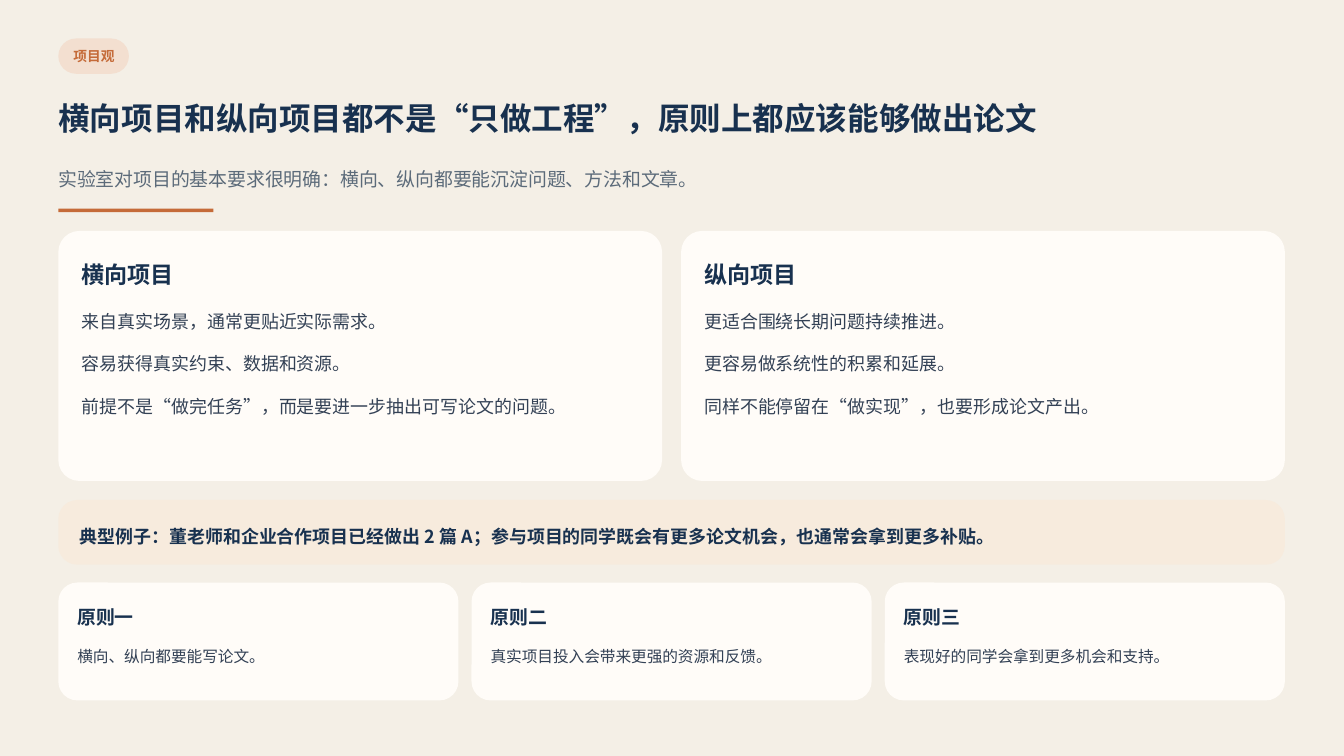
from lxml.etree import SubElement
from pptx import Presentation
from pptx.dml.color import RGBColor
from pptx.enum.shapes import MSO_SHAPE as Shape
from pptx.enum.text import MSO_ANCHOR as Anchor, PP_ALIGN as Align
from pptx.oxml.ns import qn
from pptx.util import Cm, Pt

TAG = "项目观"
TITLE = "横向项目和纵向项目都不是“只做工程”，原则上都应该能够做出论文"
SUBTITLE = "实验室对项目的基本要求很明确：横向、纵向都要能沉淀问题、方法和文章。"
PROJECTS = [
    ("横向项目", [
        "来自真实场景，通常更贴近实际需求。",
        "容易获得真实约束、数据和资源。",
        "前提不是“做完任务”，而是要进一步抽出可写论文的问题。",
    ]),
    ("纵向项目", [
        "更适合围绕长期问题持续推进。",
        "更容易做系统性的积累和延展。",
        "同样不能停留在“做实现”，也要形成论文产出。",
    ]),
]
EXAMPLE = "典型例子：董老师和企业合作项目已经做出 2 篇 A；参与项目的同学既会有更多论文机会，也通常会拿到更多补贴。"
PRINCIPLES = [
    ("原则一", "横向、纵向都要能写论文。"),
    ("原则二", "真实项目投入会带来更强的资源和反馈。"),
    ("原则三", "表现好的同学会拿到更多机会和支持。"),
]

FONT = "Noto Sans CJK SC"
PAPER = RGBColor(0xF4, 0xEF, 0xE6)
CARD = RGBColor(0xFF, 0xFC, 0xF8)
BAND = RGBColor(0xF7, 0xEB, 0xDD)
PEACH = RGBColor(0xF3, 0xDF, 0xD0)
ORANGE = RGBColor(0xC5, 0x6B, 0x39)
NAVY = RGBColor(0x18, 0x31, 0x4F)
SLATE = RGBColor(0x33, 0x41, 0x55)
GRAY = RGBColor(0x5C, 0x6B, 0x7A)

LEFT, WIDTH = 1.47, 30.91
PROJECT_TOP, PROJECT_HEIGHT, PROJECT_GAP, PROJECT_PAD = 5.82, 6.3, 0.48, 0.58
LINE_OFFSET, LINE_PITCH = 1.73, 1.07
BAND_TOP, BAND_HEIGHT, BAND_PAD = 12.6, 1.63, 0.53
PRINCIPLE_TOP, PRINCIPLE_HEIGHT, PRINCIPLE_GAP, PRINCIPLE_PAD = 14.68, 2.97, 0.33, 0.48


def write(shape, text, size, color, spacing, bold=False):
    """Fill a shape with one formatted paragraph without margins."""
    frame = shape.text_frame
    frame.word_wrap = True
    frame.vertical_anchor = Anchor.TOP
    frame.margin_left = frame.margin_top = frame.margin_right = frame.margin_bottom = 0
    paragraph = frame.paragraphs[0]
    paragraph.text = text
    paragraph.alignment = Align.LEFT
    paragraph.line_spacing = spacing
    paragraph.space_before = Pt(0)
    font = paragraph.font
    font.name, font.size, font.bold = FONT, Pt(size), bold
    font.color.rgb = color
    properties = paragraph._p.get_or_add_pPr().find(qn("a:defRPr"))
    SubElement(properties, qn("a:ea")).set("typeface", FONT)


def add_text(slide, left, top, width, height, *style):
    """Add a text box."""
    write(slide.shapes.add_textbox(Cm(left), Cm(top), Cm(width), Cm(height)), *style)


def add_panel(slide, left, top, width, height, color, radius=0):
    """Add a plain panel, rounded when a radius is given."""
    kind = Shape.ROUNDED_RECTANGLE if radius else Shape.RECTANGLE
    panel = slide.shapes.add_shape(kind, Cm(left), Cm(top), Cm(width), Cm(height))
    if radius:
        panel.adjustments[0] = radius / height
    panel.shadow.inherit = False
    panel.fill.solid()
    panel.fill.fore_color.rgb = color
    panel.line.fill.background()


def columns(count, gap):
    """Return the left edges and the width of equal columns."""
    width = (WIDTH - gap * (count - 1)) / count
    return [LEFT + index * (width + gap) for index in range(count)], width


def add_header(slide):
    """Add the tag, title, subtitle and accent rule."""
    add_panel(slide, LEFT, 0.97, 1.78, 0.89, PEACH, 0.445)
    add_text(slide, 1.85, 1.17, 1.1, 0.46, TAG, 9.8, ORANGE, 1.1, True)
    title = slide.shapes.title
    title.left, title.top, title.width, title.height = Cm(LEFT), Cm(2.31), Cm(WIDTH), Cm(1.14)
    write(title, TITLE, 22.5, NAVY, 1.2, True)
    add_text(slide, LEFT, 3.94, WIDTH, 0.86, SUBTITLE, 13.5, GRAY, 1.5)
    add_panel(slide, LEFT, 5.26, 3.91, 0.09, ORANGE)


def add_projects(slide):
    """Add the two project cards."""
    lefts, width = columns(len(PROJECTS), PROJECT_GAP)
    inner = width - 2 * PROJECT_PAD
    for left, (heading, lines) in zip(lefts, PROJECTS):
        add_panel(slide, left, PROJECT_TOP, width, PROJECT_HEIGHT, CARD, 0.53)
        text_left = left + PROJECT_PAD
        add_text(slide, text_left, PROJECT_TOP + PROJECT_PAD, inner, 0.86,
                 heading, 16.5, NAVY, 1.25, True)
        for row, line in enumerate(lines):
            top = PROJECT_TOP + LINE_OFFSET + row * LINE_PITCH
            add_text(slide, text_left, top, inner, 0.81, line, 12.8, SLATE, 1.5)


def add_example(slide):
    """Add the example band."""
    add_panel(slide, LEFT, BAND_TOP, WIDTH, BAND_HEIGHT, BAND, 0.48)
    add_text(slide, LEFT + BAND_PAD, BAND_TOP + 0.41, WIDTH - 2 * BAND_PAD, 0.79,
             EXAMPLE, 12.8, NAVY, 1.45, True)


def add_principles(slide):
    """Add the three principle cards."""
    lefts, width = columns(len(PRINCIPLES), PRINCIPLE_GAP)
    inner = width - 2 * PRINCIPLE_PAD
    for left, (heading, body) in zip(lefts, PRINCIPLES):
        add_panel(slide, left, PRINCIPLE_TOP, width, PRINCIPLE_HEIGHT, CARD, 0.48)
        text_left = left + PRINCIPLE_PAD
        add_text(slide, text_left, PRINCIPLE_TOP + PRINCIPLE_PAD, inner, 0.69,
                 heading, 13.5, NAVY, 1.2, True)
        add_text(slide, text_left, PRINCIPLE_TOP + 1.4, inner, 0.69, body, 11.2, SLATE, 1.45)


def main():
    """Build and save the slide."""
    presentation = Presentation()
    presentation.slide_width, presentation.slide_height = Cm(33.87), Cm(19.05)
    slide = presentation.slides.add_slide(presentation.slide_layouts[5])
    slide.background.fill.solid()
    slide.background.fill.fore_color.rgb = PAPER
    add_header(slide)
    add_projects(slide)
    add_example(slide)
    add_principles(slide)
    presentation.save("out.pptx")


if __name__ == "__main__":
    main()
